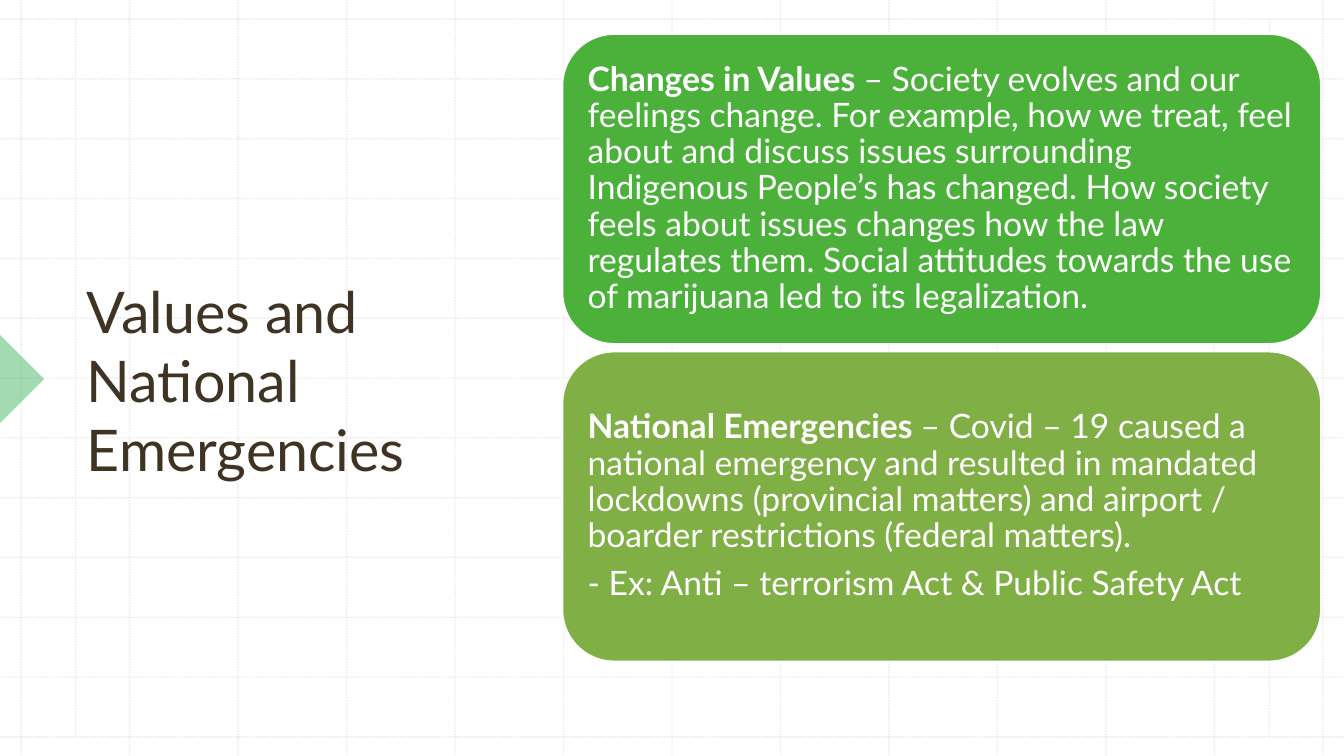
"""Build the slide on values and national emergencies."""
from lxml.etree import SubElement
from pptx import Presentation
from pptx.dml.color import RGBColor
from pptx.enum.dml import MSO_LINE
from pptx.enum.shapes import MSO_CONNECTOR, MSO_SHAPE
from pptx.enum.text import MSO_ANCHOR, MSO_AUTO_SIZE, PP_ALIGN
from pptx.oxml.ns import qn
from pptx.util import Inches, Pt


def paint(color_format, color, opacity=100):
    """Set a solid colour, with an opacity in percent."""
    color_format.rgb = RGBColor.from_string(color)
    if opacity < 100:
        choice = color_format._xFill.find(qn("a:srgbClr"))
        SubElement(choice, qn("a:alpha"), val=str(opacity * 1000))


def write(para, text, color, **formats):
    """Add a run of Lato text to a paragraph."""
    span = para.add_run()
    span.text = text
    for name, value in {"name": "Lato", **formats}.items():
        setattr(span.font, name, value)
    paint(span.font.color, color)


deck = Presentation()
deck.slide_width, deck.slide_height = Inches(13.33), Inches(7.5)
page = deck.slides.add_slide(deck.slide_layouts[5])

column_step = (13.12 - 0.21) / 12
row_step = (7.31 - 0.19) / 12
grid = [(0.21 + i * column_step, 0, 0.21 + i * column_step, 7.5) for i in range(13)]
grid += [(0, 0.19 + i * row_step, 13.33, 0.19 + i * row_step) for i in range(13)]
grid += [(x, 0.19, x, 7.31) for x in (0.75, 12.59)]
for ends in grid:
    rule = page.shapes.add_connector(MSO_CONNECTOR.STRAIGHT, *map(Inches, ends))
    rule.line.width = Pt(1)
    rule.line.fill.solid()
    paint(rule.line.fill.fore_color, "BCBCBC", 30)
    rule.line.dash_style = MSO_LINE.ROUND_DOT
    SubElement(rule._element.spPr, qn("a:effectLst"))

marker = page.shapes.add_shape(
    MSO_SHAPE.RIGHT_TRIANGLE, Inches(-0.31), Inches(3.45), Inches(0.62), Inches(0.62))
marker.rotation = 225
marker.shadow.inherit = False
marker.fill.solid()
paint(marker.fill.fore_color, "47B666", 50)
marker.line.fill.background()

title = page.shapes.title
page.shapes._spTree.append(title._element)
title.left, title.top = Inches(0.76), Inches(0.79)
title.width, title.height = Inches(3.75), Inches(5.95)
title_format = {"word_wrap": True, "auto_size": MSO_AUTO_SIZE.NONE,
                "vertical_anchor": MSO_ANCHOR.MIDDLE}
for name, value in title_format.items():
    setattr(title.text_frame, name, value)
heading = title.text_frame.paragraphs[0]
heading.alignment = PP_ALIGN.LEFT
write(heading, "Values and National Emergencies", "3F3423", size=Pt(41))

cards = [
    ("4BB13B", [
        ("Changes in Values ",
         "– Society evolves and our feelings change. For example, how we treat, feel "
         "about and discuss issues surrounding Indigenous People’s has changed. How "
         "society feels about issues changes how the law regulates them. Social "
         "attitudes towards the use of marijuana led to its legalization.")]),
    ("80AF45", [
        ("National Emergencies ",
         "– Covid – 19 caused a national emergency and resulted in mandated lockdowns "
         "(provincial matters) and airport / boarder restrictions (federal matters)."),
        ("", "- Ex: Anti – terrorism Act & Public Safety Act")]),
]
frame_format = {"word_wrap": True, "vertical_anchor": MSO_ANCHOR.MIDDLE}
frame_format.update({f"margin_{side}": Inches(0.1)
                     for side in ("left", "top", "right", "bottom")})
para_format = {"alignment": PP_ALIGN.LEFT, "line_spacing": 0.9, "space_after": Pt(8.4)}
for index, (color, texts) in enumerate(cards):
    card = page.shapes.add_shape(
        MSO_SHAPE.ROUNDED_RECTANGLE, Inches(5.58), Inches(0.34 + index * 3.15),
        Inches(7.52), Inches(3.07))
    card.shadow.inherit = False
    card.fill.solid()
    paint(card.fill.fore_color, color)
    card.line.width = Pt(1)
    paint(card.line.color, "FFFFFF")
    frame = card.text_frame
    for name, value in frame_format.items():
        setattr(frame, name, value)
    for number, (lead, body) in enumerate(texts):
        para = frame.add_paragraph() if number else frame.paragraphs[0]
        for name, value in para_format.items():
            setattr(para, name, value)
        if lead:
            write(para, lead, "FFFFFF", size=Pt(24), bold=True)
        write(para, body, "FFFFFF", size=Pt(24), bold=False)

deck.save("out.pptx")
